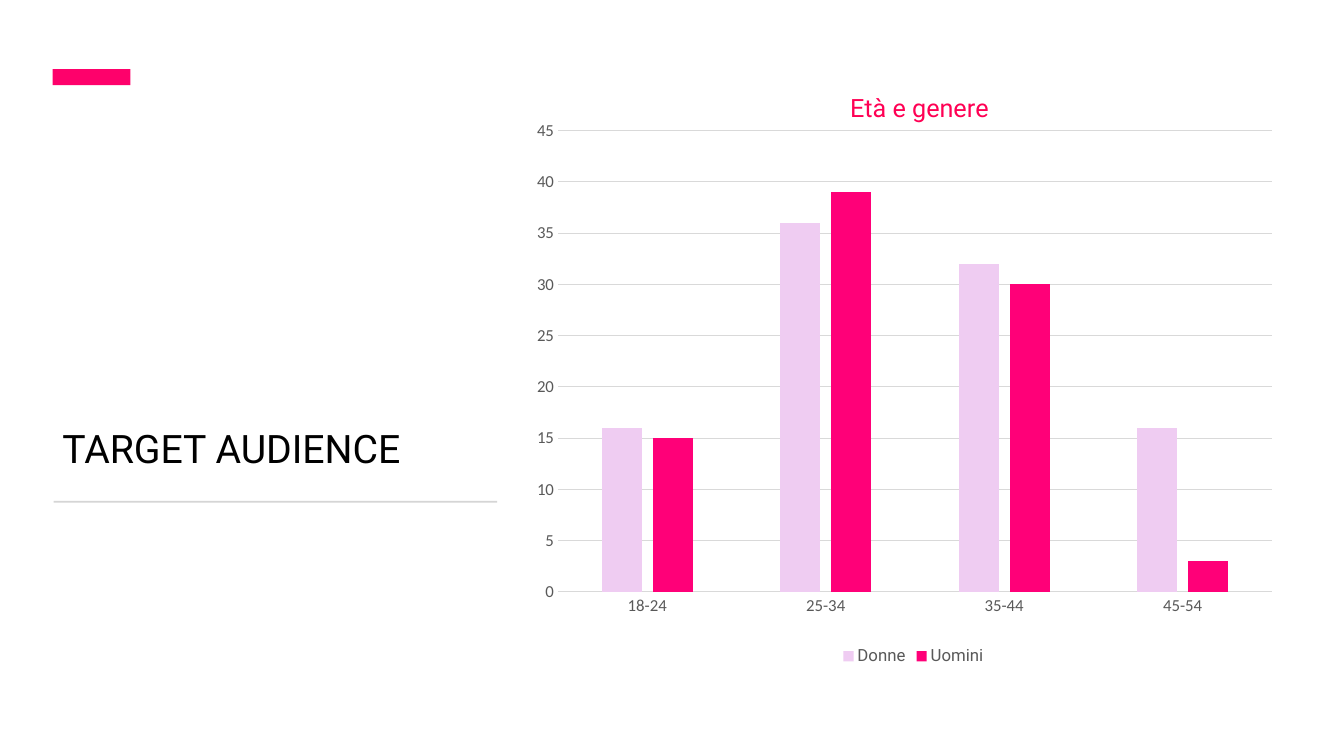
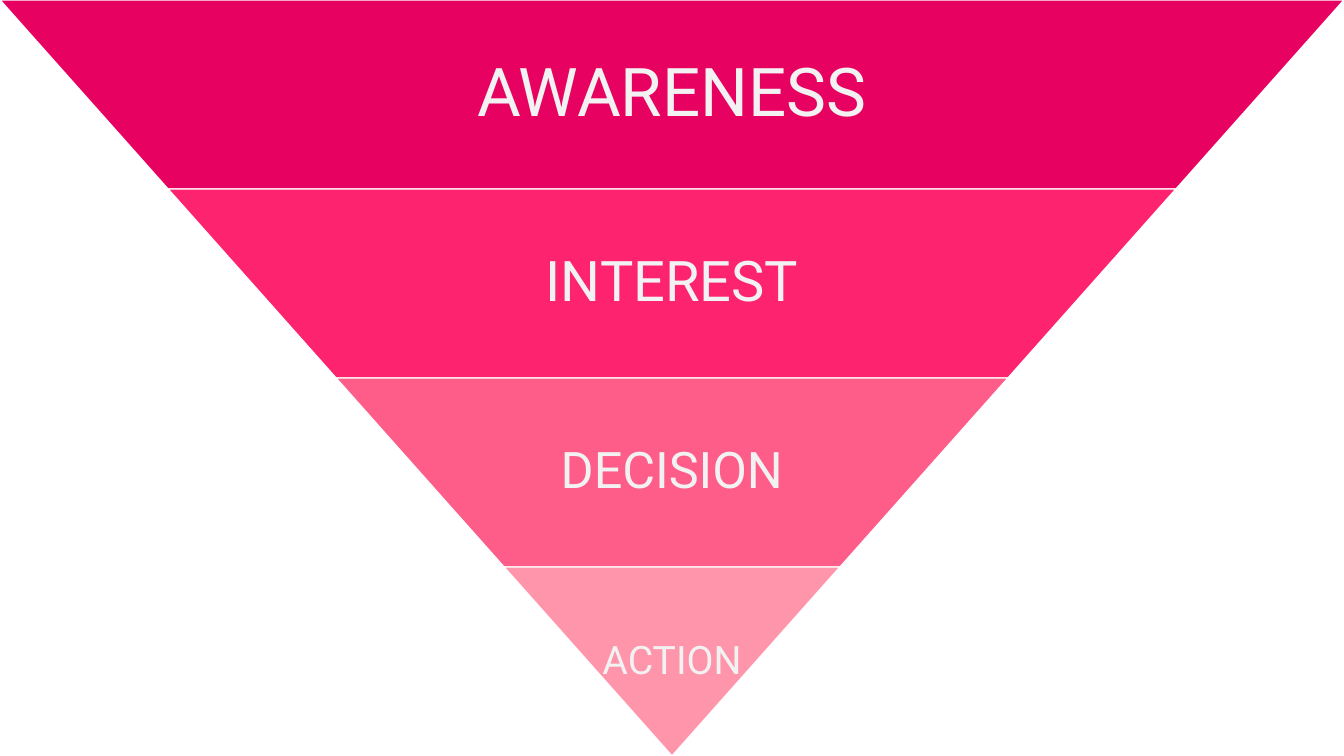
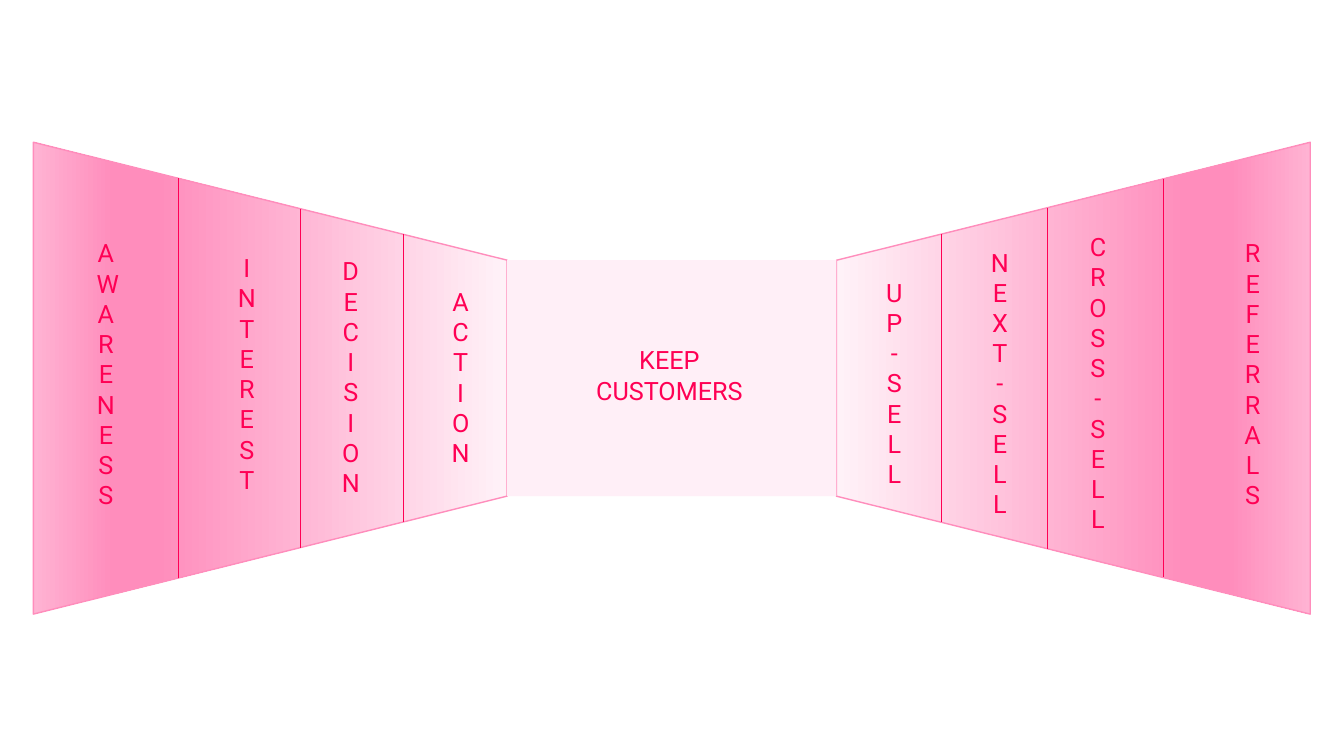
"""Build a three-slide marketing deck: target audience, sales funnel and customer retention."""
import pptx
import pptx.chart.data
import pptx.dml.color
import pptx.enum.chart
import pptx.enum.shapes
import pptx.enum.text
import pptx.oxml
import pptx.oxml.ns
import pptx.util
from lxml import etree

Cm = pptx.util.Cm
Pt = pptx.util.Pt
RGBColor = pptx.dml.color.RGBColor
MSO_SHAPE = pptx.enum.shapes.MSO_SHAPE
MSO_ANCHOR = pptx.enum.text.MSO_ANCHOR
PP_ALIGN = pptx.enum.text.PP_ALIGN
XL_TICK_MARK = pptx.enum.chart.XL_TICK_MARK
qn = pptx.oxml.ns.qn

SLIDE_W, SLIDE_H = 33.87, 19.05
TITLE_ONLY, BLANK = 5, 6
FONT, AXIS_FONT = "Roboto", "Calibri"

BLACK = RGBColor(0x00, 0x00, 0x00)
WHITE = RGBColor(0xFF, 0xFF, 0xFF)
OFF_WHITE = RGBColor(0xF2, 0xF2, 0xF2)
RULE_GREY = RGBColor(0xD5, 0xD5, 0xD5)
GRID_GREY = RGBColor(0xD9, 0xD9, 0xD9)
LABEL_GREY = RGBColor(0x59, 0x59, 0x59)
ACCENT = RGBColor(0xFE, 0x01, 0x6B)
CRIMSON = RGBColor(0xFF, 0x00, 0x54)
MAGENTA = RGBColor(0xFF, 0x00, 0x78)
LILAC = RGBColor(0xEF, 0xCC, 0xF2)
PALE_PINK = RGBColor(0xFF, 0xEF, 0xF7)
MID_PINK = RGBColor(0xFF, 0x8D, 0xBC)
FADE = [(0, RGBColor(0xFF, 0xF2, 0xF8)), (74, MID_PINK), (83, MID_PINK),
        (100, RGBColor(0xFF, 0xB3, 0xD3))]

FUNNEL_STEPS = [
    ("AWARENESS", 48, RGBColor(0xE7, 0x01, 0x61)),
    ("INTEREST", 40, RGBColor(0xFE, 0x23, 0x6F)),
    ("DECISION", 36, RGBColor(0xFE, 0x5C, 0x89)),
    ("ACTION", 28, RGBColor(0xFE, 0x95, 0xAB)),
]

MID_X, MID_Y = 16.93, 9.53
CORE_W, CORE_H = 8.3, 5.95
WING_LENGTH, WING_H = 11.94, 11.89
DIVIDERS = [4.5, 7.57, 10.16, 23.72, 26.39, 29.31]
STAGES = [
    ("AWARENESS", 2.67, 9.46), ("INTEREST", 6.22, 9.45),
    ("DECISION", 8.84, 9.53), ("ACTION", 11.61, 9.53),
    ("UP-SELL", 22.54, 9.68), ("NEXT-SELL", 25.2, 9.69),
    ("CROSS-SELL", 27.67, 9.69), ("REFERRALS", 31.57, 9.46),
]


def style_font(font, size, color, name=FONT):
    """Set the face, size and colour of a font."""
    font.name = name
    font.size = Pt(size)
    font.bold = False
    font.color.rgb = color


def add_block(slide, kind, left, top, width, height, fill=None, line=None):
    """Add a flat preset shape with an optional fill and one-point line."""
    block = slide.shapes.add_shape(kind, Cm(left), Cm(top), Cm(width), Cm(height))
    block.shadow.inherit = False
    if fill is not None:
        block.fill.solid()
        block.fill.fore_color.rgb = fill
    if line is None:
        block.line.fill.background()
    else:
        block.line.color.rgb = line
        block.line.width = Pt(1)
    return block


def add_label(slide, text, center, extent, size, color, wrap=True):
    """Add a centred text box around a point."""
    (x, y), (width, height) = center, extent
    label = slide.shapes.add_textbox(
        Cm(x - width / 2), Cm(y - height / 2), Cm(width), Cm(height))
    frame = label.text_frame
    frame.word_wrap = wrap
    frame.text = text
    for paragraph in frame.paragraphs:
        paragraph.alignment = PP_ALIGN.CENTER
        for run in paragraph.runs:
            style_font(run.font, size, color)
    return frame


def add_outlined_label(slide, lines, x, y, width):
    """Add a stack of short lines whose letters carry an outline."""
    height = 0.26 + 0.77 * len(lines)
    frame = add_label(slide, "\n".join(lines), (x, y), (width, height), 18, CRIMSON, wrap=False)
    frame.auto_size = pptx.enum.text.MSO_AUTO_SIZE.SHAPE_TO_FIT_TEXT
    for paragraph in frame.paragraphs:
        for run in paragraph.runs:
            outline = pptx.oxml.parse_xml(
                f'<a:ln {pptx.oxml.ns.nsdecls("a")} w="{Pt(1.5)}"><a:solidFill>'
                f'<a:srgbClr val="{CRIMSON}"/></a:solidFill></a:ln>')
            run.font.fill
            run.font._element.insert(0, outline)


def apply_gradient(shape, stops):
    """Fill a shape with a top-to-bottom gradient."""
    shape.fill.gradient()
    shape.fill.gradient_angle = 270
    stop_list = next(shape.element.spPr.iter(qn("a:gsLst")))
    for stop in list(stop_list):
        stop_list.remove(stop)
    for percent, color in stops:
        stop = etree.SubElement(stop_list, qn("a:gs"), pos=str(percent * 1000))
        etree.SubElement(stop, qn("a:srgbClr"), val=str(color))


def add_divider(slide, x):
    """Add a vertical line that spans the wing at the given place."""
    reach = (abs(x - MID_X) - CORE_W / 2) / WING_LENGTH
    half = (CORE_H + (WING_H - CORE_H) * reach) / 2
    divider = slide.shapes.add_connector(
        pptx.enum.shapes.MSO_CONNECTOR.STRAIGHT,
        Cm(x), Cm(MID_Y - half), Cm(x), Cm(MID_Y + half))
    divider.line.color.rgb = CRIMSON
    divider.line.width = Pt(0.5)
    etree.SubElement(divider.element.spPr, qn("a:effectLst"))


def set_layout(parent, index, **places):
    """Give a chart part a manual layout in fractions of the chart."""
    layout = parent.find(qn("c:layout"))
    if layout is None:
        layout = etree.Element(qn("c:layout"))
        parent.insert(index, layout)
    manual = etree.SubElement(layout, qn("c:manualLayout"))
    for tag, value in places.items():
        etree.SubElement(manual, qn(f"c:{tag}"), val=str(value))


def style_axis(axis):
    """Give an axis its labels without tick marks."""
    axis.major_tick_mark = axis.minor_tick_mark = XL_TICK_MARK.NONE
    style_font(axis.tick_labels.font, 12, LABEL_GREY, AXIS_FONT)


def add_age_chart(slide):
    """Add the column chart of age and gender."""
    ages = pptx.chart.data.CategoryChartData()
    ages.categories = ["18-24", "25-34", "35-44", "45-54"]
    ages.add_series("Donne", [16, 36, 32, 16])
    ages.add_series("Uomini", [15, 39, 30, 3])
    chart = slide.shapes.add_chart(
        pptx.enum.chart.XL_CHART_TYPE.COLUMN_CLUSTERED,
        Cm(13.51), Cm(1.73), Cm(19.02), Cm(15.16), ages).chart
    style_font(chart.font, 10, BLACK, AXIS_FONT)

    chart.has_title = True
    heading = chart.chart_title.text_frame
    heading.text = "Età e genere"
    style_font(heading.paragraphs[0].runs[0].font, 18, CRIMSON)
    set_layout(chart.chart_title._element, 1, xMode="edge", yMode="edge", x=0.41, y=0.03)

    chart.has_legend = True
    chart.legend.position = pptx.enum.chart.XL_LEGEND_POSITION.BOTTOM
    chart.legend.include_in_layout = False
    style_font(chart.legend.font, 12, LABEL_GREY)

    plot = chart.plots[0]
    plot.gap_width, plot.overlap, plot.vary_by_categories = 219, -27, False
    for series, color in zip(plot.series, (LILAC, MAGENTA)):
        series.format.fill.solid()
        series.format.fill.fore_color.rgb = color

    values = chart.value_axis
    values.minimum_scale, values.maximum_scale, values.major_unit = 0, 45, 5
    values.format.line.fill.background()
    for axis in (chart.category_axis, values):
        style_axis(axis)
    for line in (chart.category_axis.format.line, values.major_gridlines.format.line):
        line.color.rgb = GRID_GREY
        line.width = Pt(0.75)
    set_layout(next(chart.element.iter(qn("c:plotArea"))), 0, layoutTarget="inner",
               xMode="edge", yMode="edge", x=0.029, y=0.103, w=0.946, h=0.767)


def build_audience(slide):
    """Lay out the audience title beside its chart."""
    title = slide.shapes.title
    title.left, title.top, title.width, title.height = Cm(1.32), Cm(3.12), Cm(11.18), Cm(8.89)
    frame = title.text_frame
    frame.text = "TARGET AUDIENCE"
    frame.word_wrap = True
    frame.vertical_anchor = MSO_ANCHOR.BOTTOM
    paragraph = frame.paragraphs[0]
    paragraph.alignment = PP_ALIGN.LEFT
    paragraph.line_spacing = 0.9
    paragraph.space_after = Pt(6)
    style_font(paragraph.runs[0].font, 28, BLACK)
    add_block(slide, MSO_SHAPE.RECTANGLE, 1.33, 1.74, 1.96, 0.41, ACCENT)
    add_block(slide, MSO_SHAPE.RECTANGLE, 1.35, 12.62, 11.18, 0.05, RULE_GREY)
    add_age_chart(slide)


def build_funnel(slide):
    """Stack the funnel steps so that they narrow to a point."""
    count = len(FUNNEL_STEPS)
    height = SLIDE_H / count
    for index, (word, size, color) in enumerate(FUNNEL_STEPS):
        width = SLIDE_W * (count - index) / count
        top = index * height
        step = add_block(slide, MSO_SHAPE.TRAPEZOID, (SLIDE_W - width) / 2, top,
                         width, height, color, WHITE)
        step.rotation = 180
        step.adjustments[0] = SLIDE_W / (2 * count) / min(width, height)
        frame = add_label(slide, word, (SLIDE_W / 2, top + height / 2),
                          (max(width * 0.65, SLIDE_W / count), height), size, OFF_WHITE)
        frame.vertical_anchor = MSO_ANCHOR.MIDDLE
        frame.paragraphs[0].line_spacing = 0.9


def build_retention(slide):
    """Draw two wings around the core and label their stages."""
    for side, rotation in ((-1, 90), (1, 270)):
        center = MID_X + side * (CORE_W + WING_LENGTH) / 2
        wing = add_block(slide, MSO_SHAPE.TRAPEZOID, center - WING_H / 2,
                         MID_Y - WING_LENGTH / 2, WING_H, WING_LENGTH, line=MID_PINK)
        wing.rotation = rotation
        apply_gradient(wing, FADE)
    add_block(slide, MSO_SHAPE.RECTANGLE, MID_X - CORE_W / 2, MID_Y - CORE_H / 2,
              CORE_W, CORE_H, PALE_PINK)
    for x in DIVIDERS:
        add_divider(slide, x)
    for word, x, y in STAGES:
        add_outlined_label(slide, list(word), x, y, 0.97)
    add_outlined_label(slide, ["KEEP", "CUSTOMERS"], 16.87, 9.46, 4.22)


def main():
    """Build the slides and save the deck."""
    deck = pptx.Presentation()
    deck.slide_width, deck.slide_height = Cm(SLIDE_W), Cm(SLIDE_H)
    for layout, build in ((TITLE_ONLY, build_audience), (BLANK, build_funnel),
                          (BLANK, build_retention)):
        build(deck.slides.add_slide(deck.slide_layouts[layout]))
    deck.save("out.pptx")


if __name__ == "__main__":
    main()
